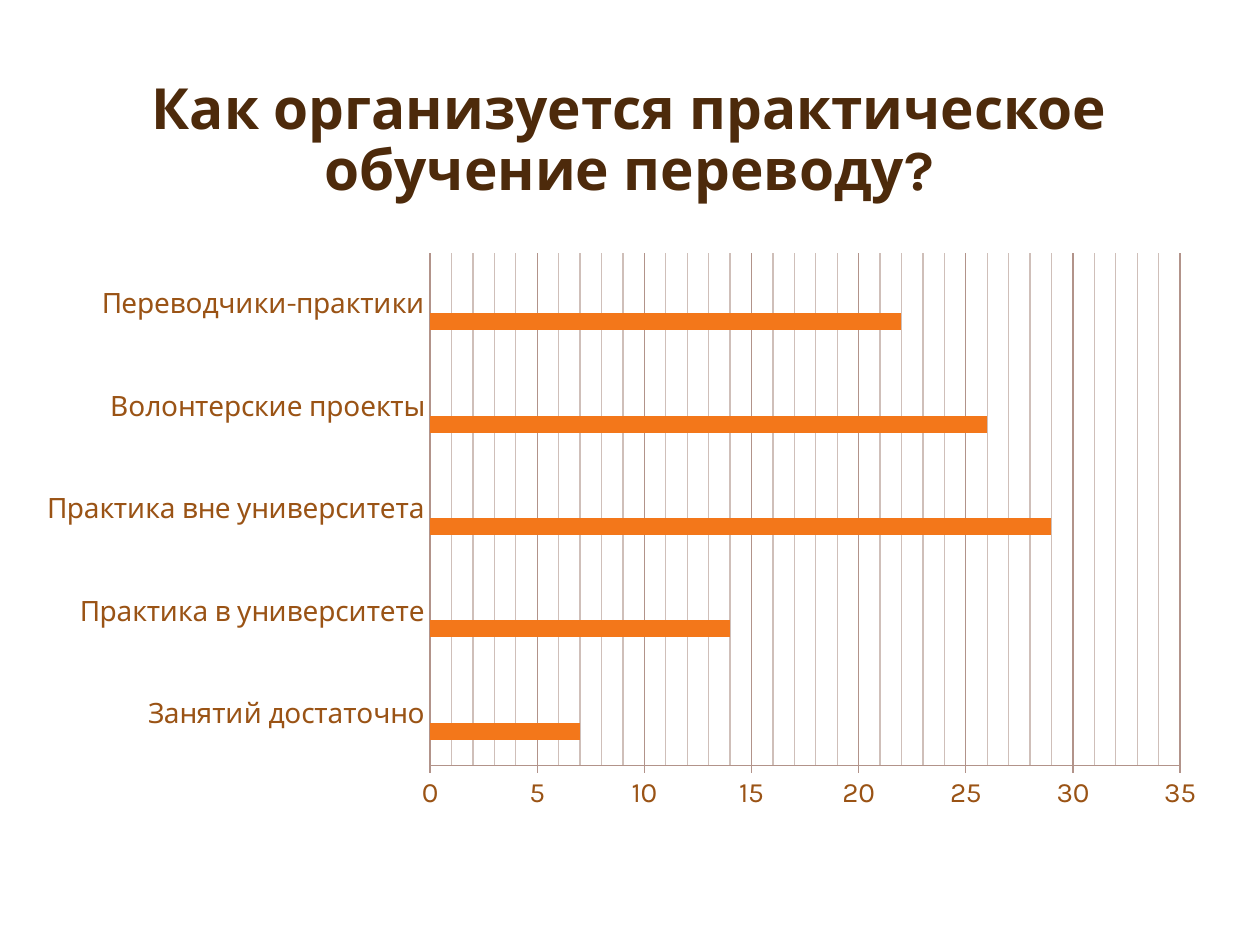
"""Build a slide with a bar chart on how practical translation training is organised."""
from dataclasses import dataclass
from typing import Any

from lxml.etree import SubElement
from pptx import Presentation
from pptx.chart.chart import Chart
from pptx.chart.data import CategoryChartData
from pptx.dml.color import RGBColor
from pptx.dml.line import LineFormat
from pptx.enum.chart import XL_CHART_TYPE, XL_TICK_MARK
from pptx.enum.text import MSO_ANCHOR, PP_ALIGN
from pptx.oxml.ns import qn
from pptx.slide import Slide
from pptx.util import Pt


@dataclass(frozen=True)
class Theme:
    font: str = "Karla"
    title_color: str = "4D2A0B"
    label_color: str = "9A5315"
    major_line: str = "B2938A"
    minor_line: str = "CFBFB9"
    title_size: float = 32.4
    label_size: float = 16
    line_width: float = 0.75


@dataclass(frozen=True)
class Box:
    left: float
    top: float
    width: float
    height: float

    def lengths(self) -> tuple[Pt, Pt, Pt, Pt]:
        return Pt(self.left), Pt(self.top), Pt(self.width), Pt(self.height)


@dataclass(frozen=True)
class Series:
    name: str
    color: str
    values: tuple[int | None, ...]


THEME = Theme()
TITLE = "Как организуется практическое обучение переводу?"
TITLE_BOX = Box(62.6, 23.8, 594, 95.8)
CHART_BOX = Box(14.4, 138.2, 680.4, 332.6)
PLOT_FRACTIONS = {"x": 0.34, "y": 0.02, "w": 0.63, "h": 0.88}
CATEGORIES = (
    "Занятий достаточно",
    "Практика в университете",
    "Практика вне университета",
    "Волонтерские проекты",
    "Переводчики-практики",
)
EMPTY = (None,) * len(CATEGORIES)
SERIES = (
    Series("Series 1", "F3771A", (7, 14, 29, 26, 22)),
    Series("Series 2", "8BBEF1", EMPTY),
    Series("Series 3", "6DC025", EMPTY),
)


def apply(target: Any, values: dict[str, Any]) -> None:
    for name, value in values.items():
        setattr(target, name, value)


def style_font(font: Any, size: float, color: str, bold: bool) -> None:
    apply(font, {"name": THEME.font, "size": Pt(size), "bold": bold})
    font.color.rgb = RGBColor.from_string(color)


def style_line(line: LineFormat, color: str) -> None:
    line.width = Pt(THEME.line_width)
    line.color.rgb = RGBColor.from_string(color)


def add_title(slide: Slide) -> None:
    frame = slide.shapes.add_textbox(*TITLE_BOX.lengths()).text_frame
    apply(frame, {"word_wrap": True, "vertical_anchor": MSO_ANCHOR.BOTTOM})
    paragraph = frame.paragraphs[0]
    apply(paragraph, {"text": TITLE, "alignment": PP_ALIGN.CENTER, "line_spacing": 0.9})
    style_font(paragraph.runs[0].font, THEME.title_size, THEME.title_color, True)


def place_plot(chart: Chart) -> None:
    plot_area = chart.element.find(f".//{qn('c:plotArea')}")
    for layout in plot_area.findall(qn("c:layout")):
        plot_area.remove(layout)
    layout = SubElement(plot_area, qn("c:layout"))
    plot_area.insert(0, layout)
    manual = SubElement(layout, qn("c:manualLayout"))
    settings = {"layoutTarget": "inner", "xMode": "edge", "yMode": "edge", **PLOT_FRACTIONS}
    for name, value in settings.items():
        SubElement(manual, qn(f"c:{name}")).set("val", str(value))


def style_minor_gridlines(chart: Chart) -> None:
    gridlines = chart.element.find(f".//{qn('c:minorGridlines')}")
    properties = SubElement(gridlines, qn("c:spPr"))
    line = SubElement(properties, qn("a:ln"), w=str(Pt(THEME.line_width)))
    fill = SubElement(line, qn("a:solidFill"))
    SubElement(fill, qn("a:srgbClr"), val=THEME.minor_line)


def style_value_axis(chart: Chart) -> None:
    axis = chart.value_axis
    apply(axis, {
        "minimum_scale": 0,
        "maximum_scale": 35,
        "major_unit": 5,
        "minor_unit": 1,
        "has_major_gridlines": True,
        "has_minor_gridlines": True,
        "major_tick_mark": XL_TICK_MARK.CROSS,
        "minor_tick_mark": XL_TICK_MARK.NONE,
    })
    style_line(axis.major_gridlines.format.line, THEME.major_line)
    style_minor_gridlines(chart)


def add_chart(slide: Slide) -> None:
    data = CategoryChartData()
    data.categories = CATEGORIES
    for series in SERIES:
        data.add_series(series.name, series.values)
    frame = slide.shapes.add_chart(XL_CHART_TYPE.BAR_CLUSTERED, *CHART_BOX.lengths(), data)
    chart = frame.chart
    apply(chart, {"has_legend": False, "has_title": False})
    style_font(chart.font, THEME.label_size, THEME.label_color, False)
    plot = chart.plots[0]
    apply(plot, {"gap_width": 300, "overlap": 0, "vary_by_categories": False})
    for drawn, series in zip(plot.series, SERIES):
        drawn.format.fill.solid()
        drawn.format.fill.fore_color.rgb = RGBColor.from_string(series.color)
    tick_marks = {"major_tick_mark": XL_TICK_MARK.NONE, "minor_tick_mark": XL_TICK_MARK.NONE}
    apply(chart.category_axis, tick_marks)
    style_value_axis(chart)
    for axis in (chart.category_axis, chart.value_axis):
        style_line(axis.format.line, THEME.major_line)
    place_plot(chart)


def main() -> None:
    presentation = Presentation()
    apply(presentation, {"slide_width": Pt(720), "slide_height": Pt(540)})
    slide = presentation.slides.add_slide(presentation.slide_layouts[6])
    add_title(slide)
    add_chart(slide)
    presentation.save("out.pptx")


if __name__ == "__main__":
    main()
